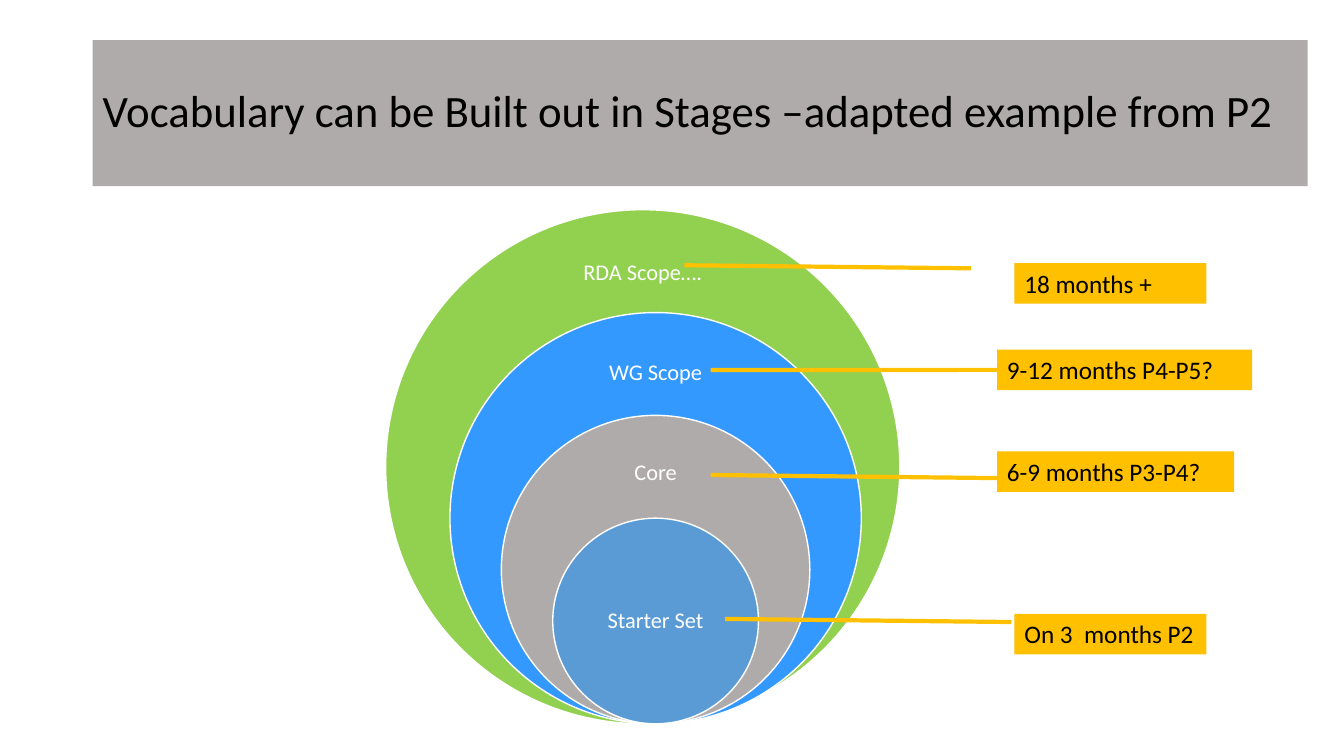
from dataclasses import dataclass
from typing import Any

from lxml.etree import SubElement
from pptx import Presentation
from pptx.dml.color import RGBColor
from pptx.enum.shapes import MSO_CONNECTOR, MSO_SHAPE
from pptx.enum.text import MSO_ANCHOR, MSO_AUTO_SIZE, PP_ALIGN
from pptx.oxml.ns import qn
from pptx.util import Inches, Length, Pt


@dataclass(frozen=True)
class Theme:
    font: str = "Calibri"
    black: str = "000000"
    white: str = "FFFFFF"
    gray: str = "AFABAB"
    green: str = "92D050"
    bright_blue: str = "3399FF"
    soft_blue: str = "5B9BD5"
    amber: str = "FFC000"
    title_size: int = 32
    callout_size: int = 18
    label_size: int = 16


@dataclass(frozen=True)
class Stage:
    """One ring with its callout, measured in grid cells."""
    name: str
    color: str
    diameter: float
    center: float
    label_row: float
    timing: str
    box_column: float
    box_row: float
    box_width: float
    line_column: float
    line_row: float
    joined: bool = False


THEME = Theme()
CELL = 0.51
RINGS_BOTTOM = 14.08
LABEL_WIDTH, LABEL_HEIGHT = 2.8, 1.4
BOX_HEIGHT = 0.79
LINE_WIDTH, LINE_DROP = 5.57, 0.06

STAGES = [
    Stage("RDA Scope….", THEME.green, 10, 12.5, 5.32,
          "18 months +", 19.73, 5.12, 3.73, 13.31, 5.16),
    Stage("WG Scope", THEME.bright_blue, 8, 12.75, 7.26,
          "9-12 months P4-P5?", 19.39, 6.8, 4.96, 13.82, 7.2, joined=True),
    Stage("Core", THEME.gray, 6, 12.75, 9.21,
          "6-9 months P3-P4?", 19.39, 8.78, 4.61, 13.82, 9.24),
    Stage("Starter Set", THEME.soft_blue, 4, 12.75, 12.08,
          "On 3  months P2", 19.73, 11.94, 3.73, 14.1, 12.04),
]


def cells(count: float) -> Length:
    return Inches(count * CELL)


def grid_box(column: float, row: float, width: float, height: float) -> list[Length]:
    return [cells(count) for count in (column, row, width, height)]


def fill_shape(shape: Any, color: str) -> None:
    shape.fill.solid()
    shape.fill.fore_color.rgb = RGBColor.from_string(color)


def write_text(shape: Any, text: str, *, size: int, color: str = THEME.black,
               align: PP_ALIGN = PP_ALIGN.LEFT, anchor: MSO_ANCHOR = MSO_ANCHOR.MIDDLE,
               line_spacing: float = 1.0) -> None:
    frame = shape.text_frame
    frame.word_wrap = True
    frame.auto_size = MSO_AUTO_SIZE.NONE
    frame.vertical_anchor = anchor
    paragraph = frame.paragraphs[0]
    paragraph.alignment = align
    paragraph.line_spacing = line_spacing
    run = paragraph.add_run()
    run.text = text
    run.font.name = THEME.font
    run.font.size = Pt(size)
    run.font.color.rgb = RGBColor.from_string(color)


def add_title(slide: Any, text: str) -> None:
    title = slide.shapes.title
    title.left, title.top, title.width, title.height = grid_box(1.8, 0.78, 23.63, 2.84)
    fill_shape(title, THEME.gray)
    write_text(title, text, size=THEME.title_size, line_spacing=0.9)


def add_ring(slide: Any, stage: Stage) -> None:
    ring = slide.shapes.add_shape(MSO_SHAPE.OVAL, *grid_box(
        stage.center - stage.diameter / 2, RINGS_BOTTOM - stage.diameter,
        stage.diameter, stage.diameter))
    ring.shadow.inherit = False
    fill_shape(ring, stage.color)
    ring.line.color.rgb = RGBColor.from_string(THEME.white)
    ring.line.width = Pt(1)
    label = slide.shapes.add_textbox(*grid_box(
        stage.center - LABEL_WIDTH / 2, stage.label_row - LABEL_HEIGHT / 2,
        LABEL_WIDTH, LABEL_HEIGHT))
    write_text(label, stage.name, size=THEME.label_size, color=THEME.white,
               align=PP_ALIGN.CENTER, line_spacing=0.9)


def add_callout(slide: Any, stage: Stage) -> None:
    box = slide.shapes.add_shape(MSO_SHAPE.RECTANGLE, *grid_box(
        stage.box_column, stage.box_row, stage.box_width, BOX_HEIGHT))
    box.shadow.inherit = False
    fill_shape(box, THEME.amber)
    box.line.fill.background()
    write_text(box, stage.timing, size=THEME.callout_size, anchor=MSO_ANCHOR.TOP)

    leader = slide.shapes.add_connector(
        MSO_CONNECTOR.STRAIGHT, cells(stage.line_column), cells(stage.line_row),
        cells(stage.line_column + LINE_WIDTH), cells(stage.line_row + LINE_DROP))
    leader.line.color.rgb = RGBColor.from_string(THEME.amber)
    leader.line.width = Pt(3)
    SubElement(leader.element.spPr, qn("a:effectLst"))
    if stage.joined:
        leader.end_connect(box, 1)


def main() -> None:
    presentation = Presentation()
    presentation.slide_width = Inches(13.33)
    presentation.slide_height = Inches(7.5)
    slide = presentation.slides.add_slide(presentation.slide_layouts.get_by_name("Title Only"))
    add_title(slide, "Vocabulary can be Built out in Stages –adapted example from P2")
    for stage in STAGES:
        add_ring(slide, stage)
    for stage in STAGES:
        add_callout(slide, stage)
    presentation.save("out.pptx")


if __name__ == "__main__":
    main()
